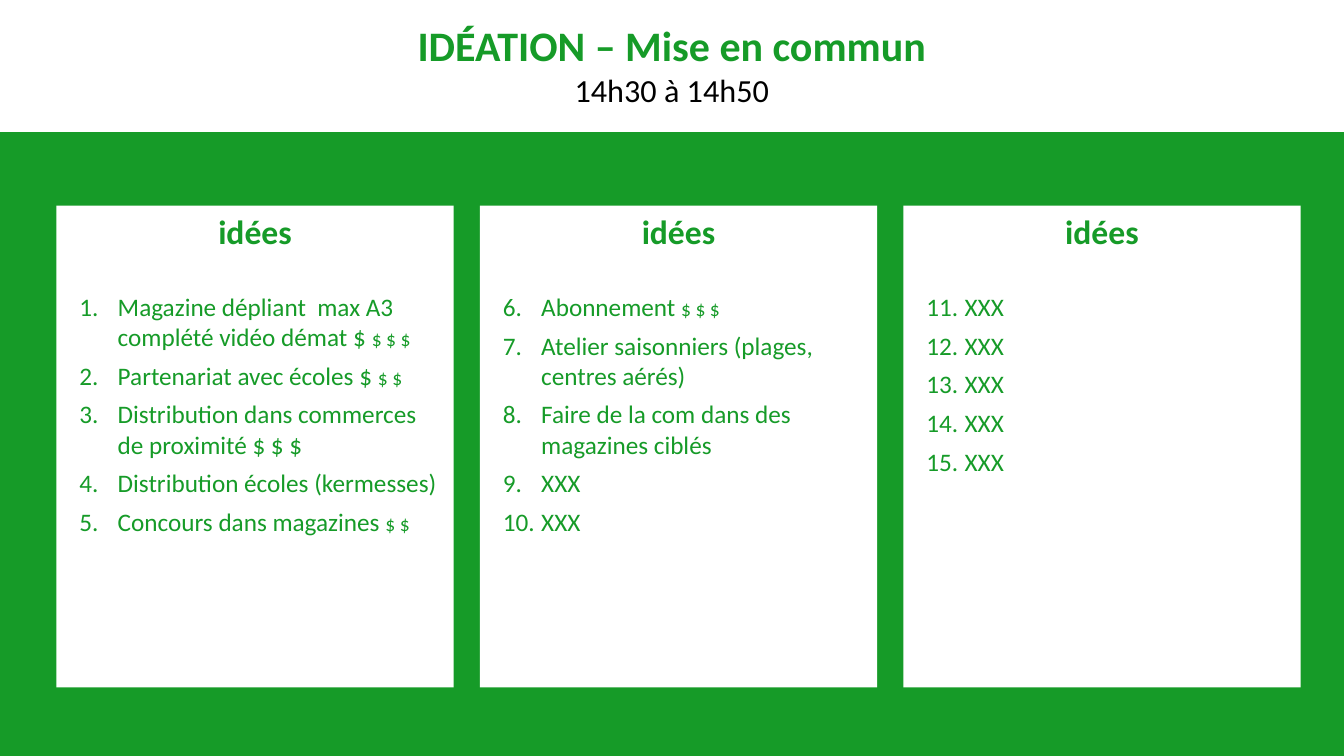
import pptx
import pptx.dml.color
import pptx.enum.shapes
import pptx.enum.text
import pptx.oxml.ns
import pptx.util
from lxml import etree
from pptx.util import Inches

COLORS = {"green": "169B28", "white": "FFFFFF", "black": "000000"}
FONT = "Calibri"
CARD_LEFT, CARD_TOP, CARD_WIDTH, CARD_HEIGHT = 0.56, 2.04, 3.94, 4.78
CARD_PITCH = 4.2
LIST_TOP, LIST_HEIGHT = 2.84, 3.99

IDEA_COLUMNS = [
    [
        ("Magazine dépliant  max A3 complété vidéo démat $ ", "$ $ $"),
        ("Partenariat avec écoles $ ", "$ $"),
        ("Distribution dans commerces de proximité $ $ $", ""),
        ("Distribution écoles (kermesses)", ""),
        ("Concours dans magazines ", "$ $"),
    ],
    [
        ("Abonnement ", "$ $ $"),
        ("Atelier saisonniers (plages, centres aérés)", ""),
        ("Faire de la com dans des magazines ciblés", ""),
        ("XXX", ""),
        ("XXX", ""),
    ],
    [("XXX", "")] * 5,
]


def rgb(color):
    """Return the named colour as an RGB value."""
    return pptx.dml.color.RGBColor.from_string(COLORS[color])


def style(paragraph, size, color="green", bold=False):
    """Set the font of a whole paragraph."""
    font = paragraph.font
    font.name, font.size, font.bold = FONT, pptx.util.Pt(size), bold
    font.color.rgb = rgb(color)


def add_panel(slide, left, top, width, height):
    """Add a plain white rectangle and return its text frame."""
    panel = slide.shapes.add_shape(
        pptx.enum.shapes.MSO_SHAPE.RECTANGLE,
        Inches(left), Inches(top), Inches(width), Inches(height))
    panel.shadow.inherit = False
    panel.fill.solid()
    panel.fill.fore_color.rgb = rgb("white")
    panel.line.fill.background()
    panel.text_frame.word_wrap = True
    return panel.text_frame


def add_header(slide):
    """Add the title band with the time slot."""
    header = add_panel(slide, 0, 0, 13.33, 1.31)
    header.vertical_anchor = pptx.enum.text.MSO_ANCHOR.MIDDLE
    header.margin_bottom = Inches(0.08)
    title, schedule = header.paragraphs[0], header.add_paragraph()
    title.text, schedule.text = "IDÉATION – Mise en commun", "14h30 à 14h50"
    title.alignment = schedule.alignment = pptx.enum.text.PP_ALIGN.CENTER
    style(title, 30, bold=True)
    style(schedule, 23, "black")


def add_card(slide, left):
    """Add a white card with its heading."""
    card = add_panel(slide, left, CARD_TOP, CARD_WIDTH, CARD_HEIGHT)
    card.vertical_anchor = pptx.enum.text.MSO_ANCHOR.TOP
    heading = card.paragraphs[0]
    heading.text = "idées"
    heading.alignment = pptx.enum.text.PP_ALIGN.CENTER
    heading.space_before = pptx.util.Pt(10)
    style(heading, 24, bold=True)


def number(paragraph, start):
    """Give a paragraph a green automatic number and a hanging indent."""
    qn = pptx.oxml.ns.qn
    properties = paragraph._p.get_or_add_pPr()
    properties.set("marL", str(Inches(0.51)))
    properties.set("indent", str(Inches(-0.38)))
    bullet_color = etree.SubElement(properties, qn("a:buClr"))
    etree.SubElement(bullet_color, qn("a:srgbClr"), val=COLORS["green"])
    etree.SubElement(properties, qn("a:buFont"), typeface="+mj-lt")
    etree.SubElement(properties, qn("a:buAutoNum"),
                     type="arabicPeriod", startAt=str(start))


def add_ideas(slide, left, ideas, start):
    """Add a numbered list of ideas with their cost marks."""
    frame = slide.shapes.add_textbox(
        Inches(left), Inches(LIST_TOP),
        Inches(CARD_WIDTH), Inches(LIST_HEIGHT)).text_frame
    frame.word_wrap = True
    for index, (idea, small_cost) in enumerate(ideas):
        paragraph = frame.add_paragraph() if index else frame.paragraphs[0]
        paragraph.space_before = pptx.util.Pt(6 if index else 0)
        number(paragraph, start)
        style(paragraph, 18)
        paragraph.add_run().text = idea
        if small_cost:
            cost = paragraph.add_run()
            cost.text = small_cost
            cost.font.size = pptx.util.Pt(14)


def main():
    """Build the slide and save it."""
    deck = pptx.Presentation()
    deck.slide_width, deck.slide_height = Inches(13.33), Inches(7.5)
    slide = deck.slides.add_slide(deck.slide_layouts[6])
    slide.background.fill.solid()
    slide.background.fill.fore_color.rgb = rgb("green")
    add_header(slide)
    start = 1
    for column, ideas in enumerate(IDEA_COLUMNS):
        left = CARD_LEFT + column * CARD_PITCH
        add_card(slide, left)
        add_ideas(slide, left, ideas, start)
        start += len(ideas)
    deck.save("out.pptx")


if __name__ == "__main__":
    main()
